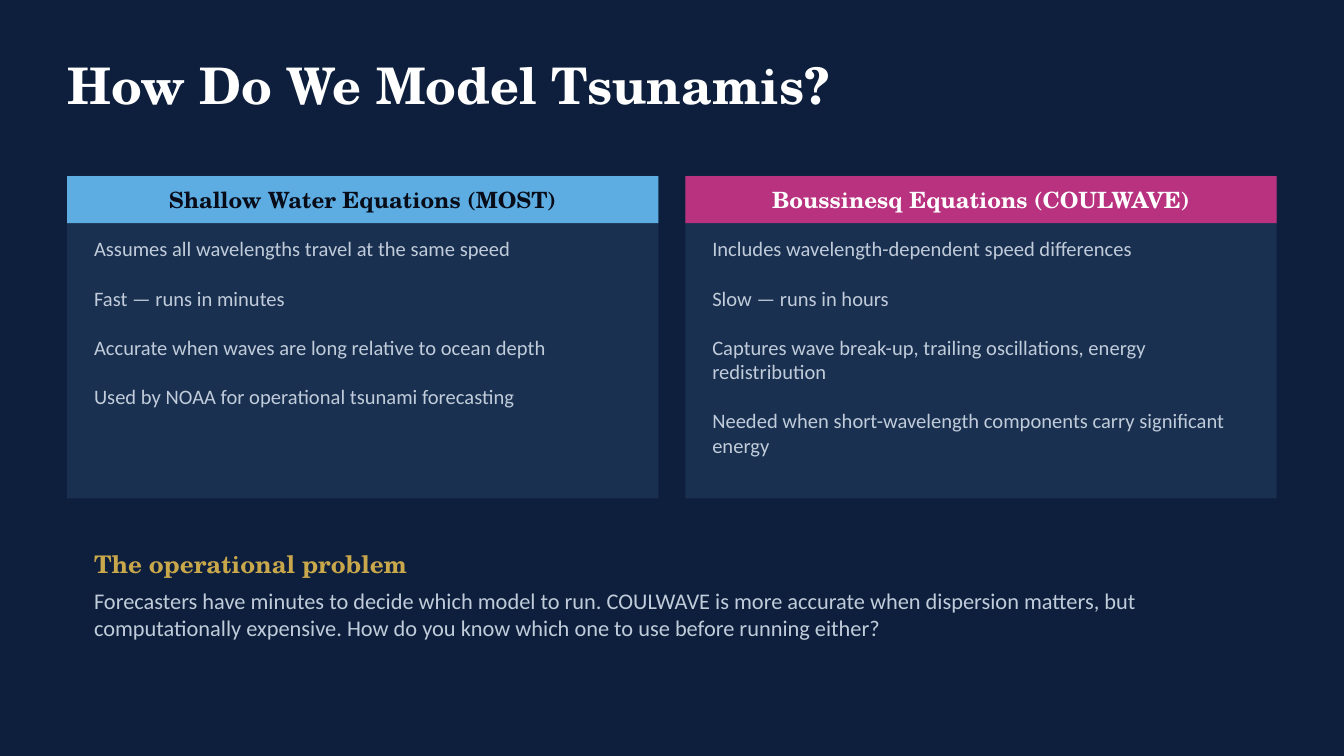
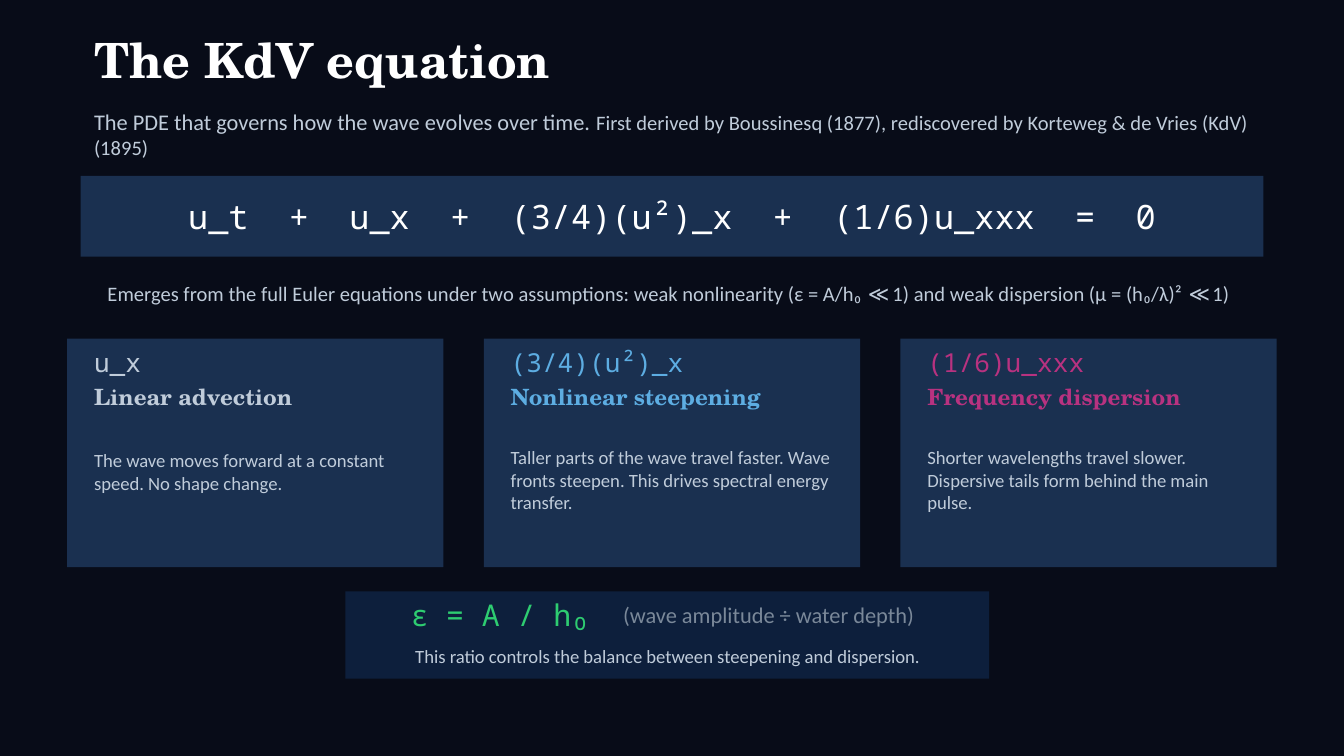
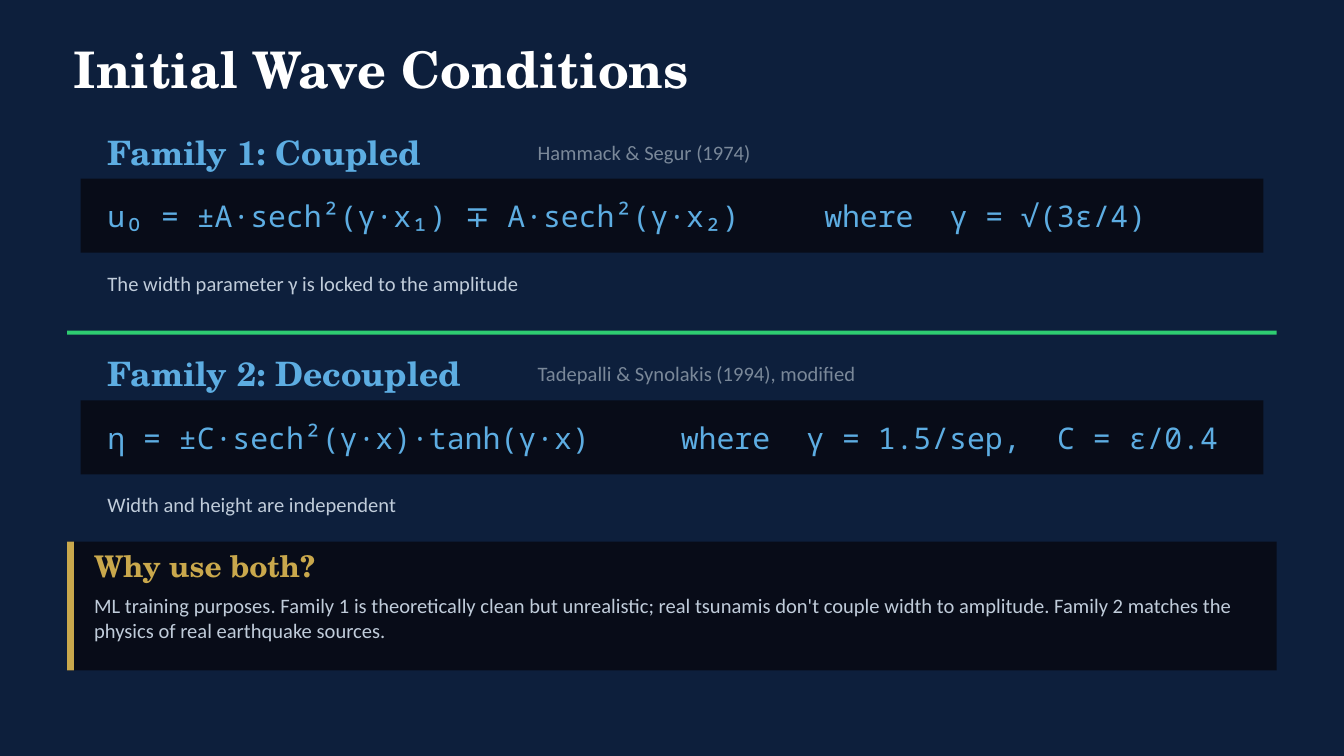
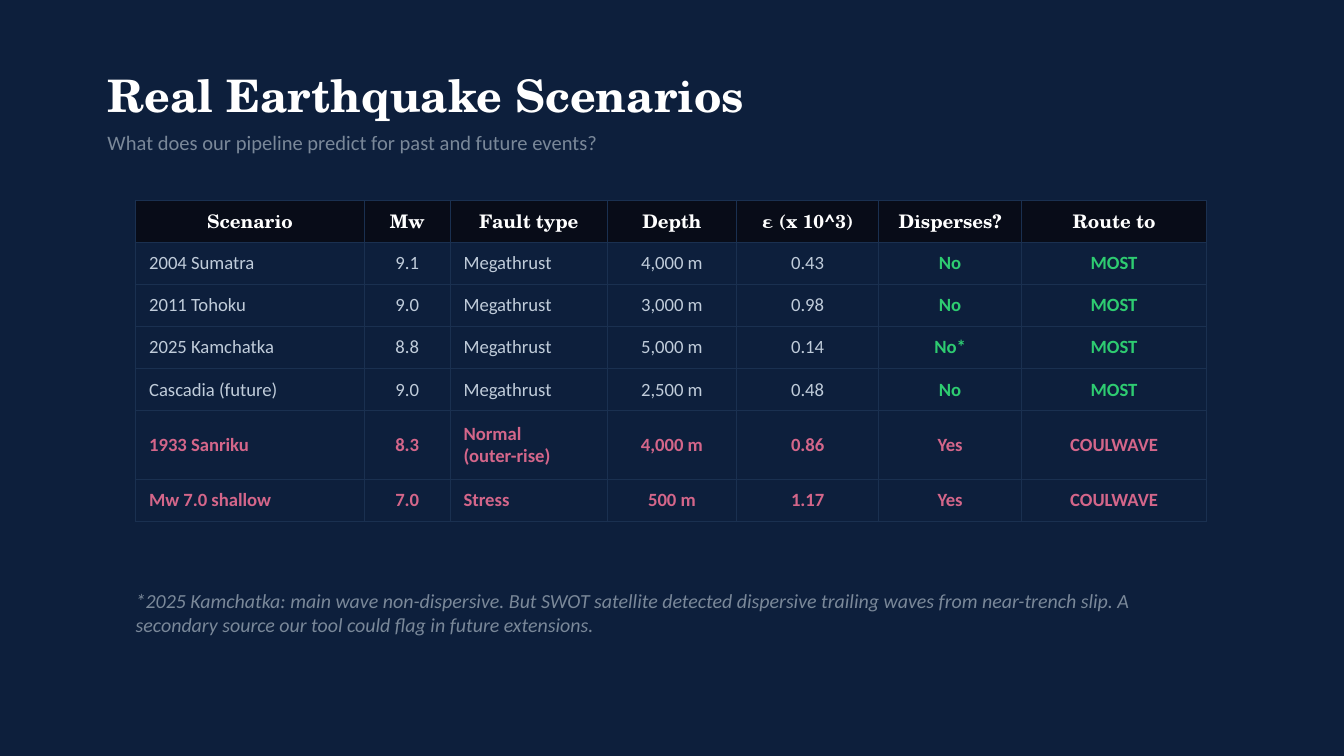
from dataclasses import dataclass
from lxml import etree
from pptx import Presentation
from pptx.dml.color import RGBColor
from pptx.enum.shapes import MSO_SHAPE
from pptx.enum.text import MSO_ANCHOR, MSO_AUTO_SIZE, PP_ALIGN
from pptx.oxml.ns import qn
from pptx.util import Inches, Pt

RECT = MSO_SHAPE.RECTANGLE
TOP, MID = MSO_ANCHOR.TOP, MSO_ANCHOR.MIDDLE
LEFT, CENTER = PP_ALIGN.LEFT, PP_ALIGN.CENTER
FIXED = MSO_AUTO_SIZE.NONE

WIDTH, HEIGHT = Inches(10), Inches(5.625)
CELL = WIDTH // 100
ADVANCE = 0.6

HUES = {
    "navy": "0D1F3C", "ink": "080C18", "panel": "1A3050", "white": "FFFFFF",
    "text": "C0CCDA", "mute": "7A8899", "sky": "5DADE2", "plum": "B83280",
    "gold": "C9A84C", "green": "2ECC71", "rose": "D4668A",
}
FACES = {"serif": "TeX Gyre Schola", "sans": "Calibri", "mono": "Noto Sans Mono"}


@dataclass
class Box:
    x: float
    y: float
    w: float
    h: float

    def inner(self, x, y, w, h):
        return Box(self.x + x, self.y + y, w, h)

    def place(self):
        return [round(n * CELL) for n in (self.x, self.y, self.w, self.h)]


def hue(name):
    return RGBColor.from_string(HUES[name])


def look(face, size, tint="text", **more):
    return {"name": FACES[face], "size": Pt(size), "tint": tint, **more}


def serif(size, tint):
    return look("serif", size, tint, bold=True)


BODY = look("sans", 11)
LARGE = look("sans", 12)
SMALL = look("sans", 10)
NOTE = look("sans", 11, "mute")


def style(font, form):
    for key, value in form.items():
        if key == "tint":
            font.color.rgb = hue(value)
        else:
            setattr(font, key, value)


def fit(frame, anchor=MID, inset=0):
    form = {
        "word_wrap": True, "auto_size": FIXED, "vertical_anchor": anchor,
        "margin_left": round(inset * CELL), "margin_right": 0,
        "margin_top": 0, "margin_bottom": 0,
    }
    for key, value in form.items():
        setattr(frame, key, value)


def write(frame, paras, form, align=LEFT, gap=0):
    for i, runs in enumerate(paras):
        para = frame.paragraphs[0] if i == 0 else frame.add_paragraph()
        para.alignment = align
        if i and gap:
            para.space_before = Pt(gap)
        for words, own in [(runs, form)] if isinstance(runs, str) else runs:
            run = para.add_run()
            run.text = words
            style(run.font, own)


def label(slide, box, words, form, align=LEFT, anchor=MID, gap=0):
    frame = slide.shapes.add_textbox(*box.place()).text_frame
    fit(frame, anchor)
    write(frame, [words] if isinstance(words, str) else words, form, align, gap)


def panel(slide, box, fill):
    shape = slide.shapes.add_shape(RECT, *box.place())
    shape.shadow.inherit = False
    shape.fill.solid()
    shape.fill.fore_color.rgb = hue(fill)
    shape.line.fill.background()
    return shape


def band(slide, box, fill, words, form):
    frame = panel(slide, box, fill).text_frame
    fit(frame)
    write(frame, [words], form, CENTER)


def formula(slide, box, fill, terms, size, tint, inset):
    frame = panel(slide, box, fill).text_frame
    fit(frame, inset=inset)
    para = frame.paragraphs[0]
    stops = etree.SubElement(para._p.get_or_add_pPr(), qn("a:tabLst"))
    end = 0
    for gap, words in terms:
        end += gap
        if gap:
            spot = str(Pt(end * size * ADVANCE))
            etree.SubElement(stops, qn("a:tab"), pos=spot, algn="l")
        end += len(words)
    line = "\t".join(words for _, words in terms)
    write(frame, [line], look("mono", size, tint))


def start(deck, back, words, box, size):
    slide = deck.slides.add_slide(deck.slide_layouts[5])
    slide.background.fill.solid()
    slide.background.fill.fore_color.rgb = hue(back)
    title = slide.shapes.title
    title.left, title.top, title.width, title.height = box.place()
    fit(title.text_frame)
    write(title.text_frame, [words], serif(size, "white"))
    return slide


def model(slide, box, head, fill, tint, points):
    panel(slide, box, "panel")
    band(slide, box.inner(0, 0, box.w, 3.5), fill, head, serif(12, tint))
    label(slide, box.inner(2, 4.5, box.w - 4, 18), points, BODY, anchor=TOP, gap=13.1)


def models(deck):
    slide = start(deck, "navy", "How Do We Model Tsunamis?", Box(5, 3.8, 90, 5), 27)
    cards = [
        ("Shallow Water Equations (MOST)", "sky", "ink", [
            "Assumes all wavelengths travel at the same speed",
            "Fast — runs in minutes",
            "Accurate when waves are long relative to ocean depth",
            "Used by NOAA for operational tsunami forecasting",
        ]),
        ("Boussinesq Equations (COULWAVE)", "plum", "white", [
            "Includes wavelength-dependent speed differences",
            "Slow — runs in hours",
            "Captures wave break-up, trailing oscillations, energy redistribution",
            "Needed when short-wavelength components carry significant energy",
        ]),
    ]
    for i, card in enumerate(cards):
        model(slide, Box(5 + 46 * i, 13.1, 44, 24), *card)
    area = Box(7, 40.7, 86, 7)
    label(slide, area.inner(0, 0, area.w, 2.5), "The operational problem", serif(13, "gold"))
    label(slide, area.inner(0, 3, area.w, 4),
          "Forecasters have minutes to decide which model to run. COULWAVE is more "
          "accurate when dispersion matters, but computationally expensive. How do you "
          "know which one to use before running either?", LARGE)


def term(slide, box, sign, head, tint, words, drop):
    panel(slide, box, "panel")
    wide = box.w - 4
    label(slide, box.inner(2, 0.5, wide, 2.5), sign, look("mono", 14, tint))
    label(slide, box.inner(2, 3.2, wide, 2.2), head, serif(12, tint))
    label(slide, box.inner(2, drop, wide, 9), words, SMALL)


def ratio(slide, box):
    panel(slide, box, "navy")
    label(slide, box.inner(4, 0.2, 15, 3), "ε = A / h₀", look("mono", 16, "green"), CENTER)
    label(slide, box.inner(17.9, 0.2, 27.2, 3), "(wave amplitude ÷ water depth)",
          look("sans", 12, "mute"), CENTER)
    label(slide, box.inner(0, 3.3, box.w, 3),
          "This ratio controls the balance between steepening and dispersion.", SMALL, CENTER)


def kdv(deck):
    slide = start(deck, "ink", "The KdV equation", Box(7, 1.9, 90, 5), 26)
    label(slide, Box(7, 8.7, 90, 2.5), [[
        ("The PDE that governs how the wave evolves over time. ", LARGE),
        ("First derived by Boussinesq (1877), rediscovered by Korteweg & de Vries "
         "(KdV) (1895)", BODY),
    ]], BODY)
    signs = ["u_t", "+", "u_x", "+", "(3/4)(u²)_x", "+", "(1/6)u_xxx", "=", "0"]
    terms = [(2 if i else 0, sign) for i, sign in enumerate(signs)]
    formula(slide, Box(6, 13.1, 88, 6), "panel", terms, 18, "white", 8)
    label(slide, Box(8, 20.3, 84, 3),
          "Emerges from the full Euler equations under two assumptions: weak nonlinearity "
          "(ε = A/h₀ ≪ 1) and weak dispersion (μ = (h₀/λ)² ≪ 1)", BODY)
    cards = [
        ("u_x", "Linear advection", "text",
         "The wave moves forward at a constant speed. No shape change.", 5.4),
        ("(3/4)(u²)_x", "Nonlinear steepening", "sky",
         "Taller parts of the wave travel faster. Wave fronts steepen. "
         "This drives spectral energy transfer.", 6),
        ("(1/6)u_xxx", "Frequency dispersion", "plum",
         "Shorter wavelengths travel slower. Dispersive tails form behind the main pulse.", 6),
    ]
    for i, card in enumerate(cards):
        term(slide, Box(5 + 31 * i, 25.2, 28, 17), *card)
    ratio(slide, Box(25.7, 44, 47.9, 6.5))


def family(slide, box, head, cite, terms, words):
    label(slide, box.inner(2, 0, 30, 3), head, serif(18, "sky"))
    label(slide, box.inner(34, 0, 40, 3), cite, NOTE)
    formula(slide, box.inner(0, 3.5, box.w, 5.5), "ink", terms, 16, "sky", 2)
    label(slide, box.inner(2, 10, box.w - 4, 2.5), words, BODY)


def reason(slide, box):
    panel(slide, box, "ink")
    panel(slide, box.inner(0, 0, 0.5, box.h), "gold")
    label(slide, box.inner(2, 0.5, box.w - 4, 2.5), "Why use both?", serif(16, "gold"))
    label(slide, box.inner(2, 3.4, box.w - 4, 4.5),
          "ML training purposes. Family 1 is theoretically clean but unrealistic; real "
          "tsunamis don't couple width to amplitude. Family 2 matches the physics of real "
          "earthquake sources.", BODY)


def waves(deck):
    slide = start(deck, "navy", "Initial Wave Conditions", Box(5.5, 2.6, 90, 5), 27)
    kinds = [
        ("Family 1: Coupled", "Hammack & Segur (1974)",
         [(0, "u₀ = ±A·sech²(γ·x₁) ∓ A·sech²(γ·x₂)"), (5, "where"), (2, "γ = √(3ε/4)")],
         "The width parameter γ is locked to the amplitude"),
        ("Family 2: Decoupled", "Tadepalli & Synolakis (1994), modified",
         [(0, "η = ±C·sech²(γ·x)·tanh(γ·x)"), (5, "where"), (2, "γ = 1.5/sep,"),
          (2, "C = ε/0.4")],
         "Width and height are independent"),
    ]
    for i, kind in enumerate(kinds):
        family(slide, Box(6, 9.8 + 16.5 * i, 88, 12.5), *kind)
    panel(slide, Box(5, 24.6, 90, 0.3), "green")
    reason(slide, Box(5, 40.3, 90, 9.6))


def border(cell):
    props = cell._tc.get_or_add_tcPr()
    for side in ("lnL", "lnR", "lnT", "lnB"):
        line = etree.SubElement(props, qn("a:" + side), w=str(Pt(0.75)))
        fill = etree.SubElement(line, qn("a:solidFill"))
        etree.SubElement(fill, qn("a:srgbClr"), val=HUES["panel"])


def tone(row, col, alert):
    if row == 0:
        return serif(10, "white")
    if alert:
        return look("sans", 10, "rose", bold=True)
    if col > 4:
        return look("sans", 10, "green", bold=True)
    return SMALL


def grid(slide, box, rows, wides, highs):
    table = slide.shapes.add_table(len(rows), len(wides), *box.place()).table
    table.first_row = table.horz_banding = False
    for col, wide in zip(table.columns, wides):
        col.width = round(wide * CELL)
    for r, row in enumerate(rows):
        table.rows[r].height = round(highs[r] * CELL)
        for c, words in enumerate(row):
            cell = table.cell(r, c)
            cell.vertical_anchor = MID
            border(cell)
            if r == 0:
                cell.fill.solid()
                cell.fill.fore_color.rgb = hue("ink")
            else:
                cell.fill.background()
            align = LEFT if r and c in (0, 2) else CENTER
            write(cell.text_frame, words.split("\n"), tone(r, c, row[5] == "Yes"), align)


def quakes(deck):
    slide = start(deck, "navy", "Real Earthquake Scenarios", Box(8, 4.5, 90, 5), 24)
    label(slide, Box(8, 9.3, 90, 2.5),
          "What does our pipeline predict for past and future events?", NOTE)
    rows = [
        ("Scenario", "Mw", "Fault type", "Depth", "ε (x 10^3)", "Disperses?", "Route to"),
        ("2004 Sumatra", "9.1", "Megathrust", "4,000 m", "0.43", "No", "MOST"),
        ("2011 Tohoku", "9.0", "Megathrust", "3,000 m", "0.98", "No", "MOST"),
        ("2025 Kamchatka", "8.8", "Megathrust", "5,000 m", "0.14", "No*", "MOST"),
        ("Cascadia (future)", "9.0", "Megathrust", "2,500 m", "0.48", "No", "MOST"),
        ("1933 Sanriku", "8.3", "Normal\n(outer-rise)", "4,000 m", "0.86", "Yes", "COULWAVE"),
        ("Mw 7.0 shallow", "7.0", "Stress", "500 m", "1.17", "Yes", "COULWAVE"),
    ]
    wides = [17, 6.4, 11.7, 9.6, 10.6, 10.6, 13.8]
    highs = [5.1 if "\n" in row[2] else 3.13 for row in rows]
    grid(slide, Box(10.1, 14.9, sum(wides), sum(highs)), rows, wides, highs)
    label(slide, Box(10.1, 44.6, 79.8, 2),
          "*2025 Kamchatka: main wave non-dispersive. But SWOT satellite detected dispersive "
          "trailing waves from near-trench slip. A secondary source our tool could flag in "
          "future extensions.", look("sans", 10.7, "mute", italic=True))


def main():
    deck = Presentation()
    deck.slide_width, deck.slide_height = WIDTH, HEIGHT
    for build in (models, kdv, waves, quakes):
        build(deck)
    deck.save("out.pptx")


if __name__ == "__main__":
    main()
